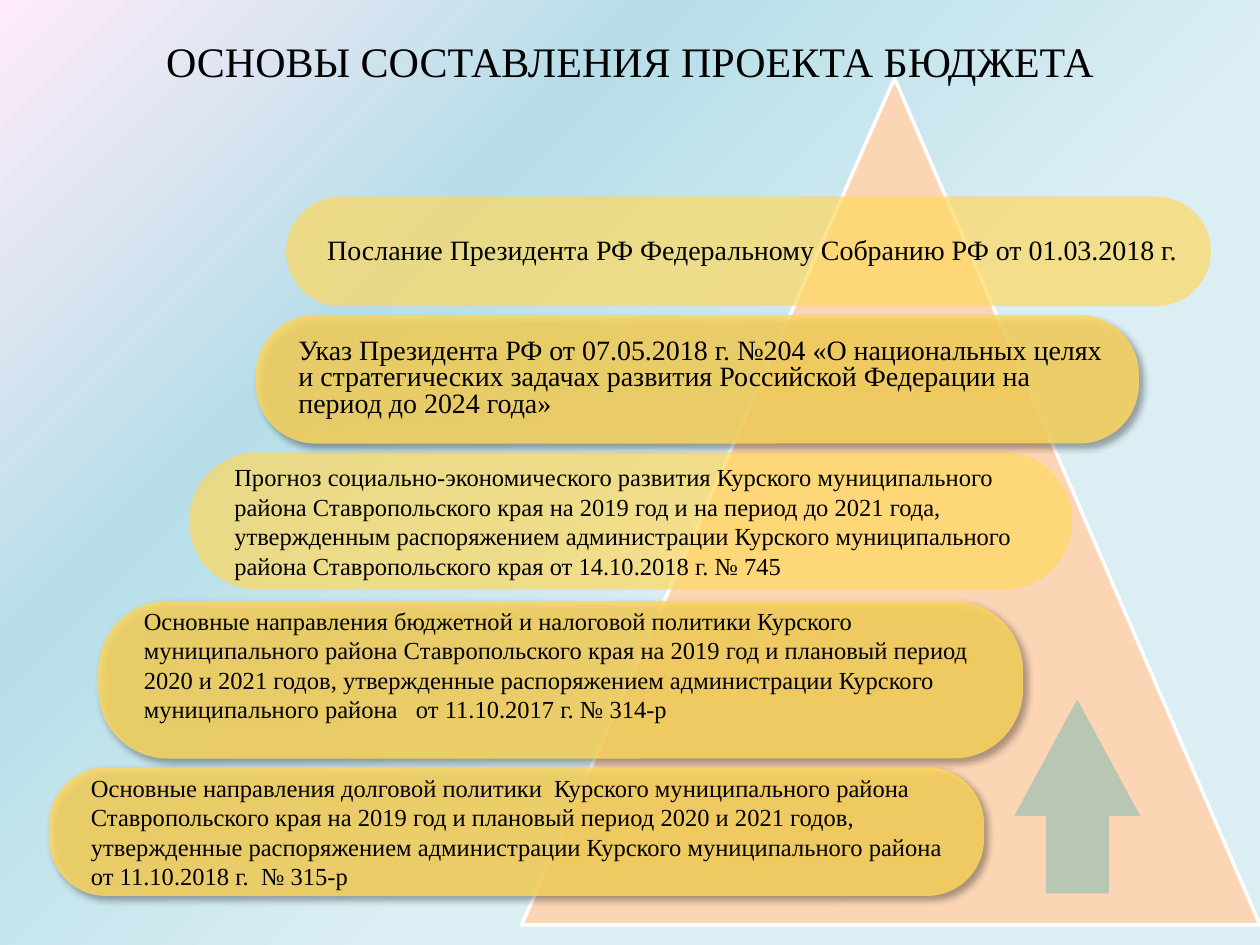
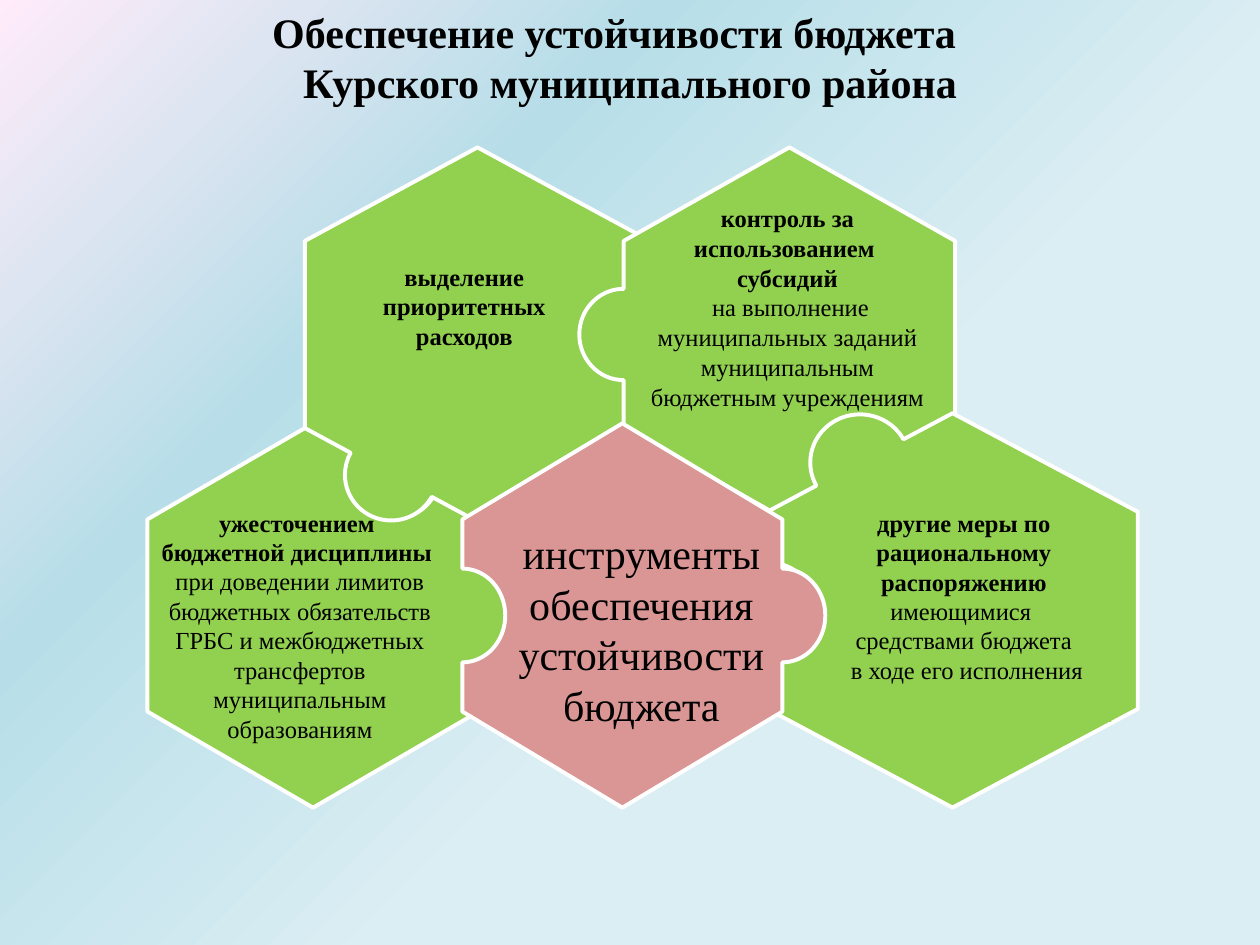
import math
from dataclasses import dataclass

from lxml import etree
from pptx import Presentation, util as u
from pptx.dml.color import RGBColor
from pptx.enum import shapes, text
from pptx.oxml import parse_xml
from pptx.oxml.ns import qn

NS = 'xmlns:a="http://schemas.openxmlformats.org/drawingml/2006/main"'
KIND = shapes.MSO_SHAPE


@dataclass(frozen=True)
class Theme:
    font: str = "Times New Roman"
    ink: str = "000000"
    white: str = "FFFFFF"
    peach: str = "FCD5B5"
    teal: str = "75B7B1"
    gold: str = "FFD85D"
    green: str = "92D050"
    rose: str = "D99694"
    back: tuple = ((0, "DBEEF4"), (40, "DBEEF4"), (70, "B7DEE8"), (100, "FFEBFA"))
    head: int = 24
    large: int = 16
    body: int = 14


T = Theme()


def inch(box):
    return [u.Inches(v) for v in box]


def paint(shape, color, alpha=100, edge=0):
    """Fill a shape, outline it in white if edge is given, drop its shadow."""
    shape.shadow.inherit = False
    shape.fill.solid()
    shape.fill.fore_color.rgb = RGBColor.from_string(color)
    if alpha < 100:
        tint = shape.fill._xPr.find(qn("a:solidFill"))[0]
        etree.SubElement(tint, qn("a:alpha"), val=str(alpha * 1000))
    if edge:
        shape.line.color.rgb = RGBColor.from_string(T.white)
        shape.line.width = u.Pt(edge)
    else:
        shape.line.fill.background()


def shade(shape):
    """Cast a soft shadow to the lower right."""
    effects = shape._element.spPr.find(qn("a:effectLst"))
    effects.append(parse_xml(
        f'<a:outerShdw {NS} blurRad="{u.Pt(4)}" dist="{u.Pt(3)}" dir="2700000" '
        'algn="tl" rotWithShape="0"><a:srgbClr val="000000">'
        '<a:alpha val="40000"/></a:srgbClr></a:outerShdw>'))


def write(shape, paras, size, center=True, lead=None):
    """Each paragraph is a list of (words, bold) runs."""
    frame = shape.text_frame
    frame.word_wrap = True
    for i, runs in enumerate(paras):
        para = frame.paragraphs[0] if i == 0 else frame.add_paragraph()
        para.alignment = text.PP_ALIGN.CENTER if center else text.PP_ALIGN.LEFT
        if lead:
            para.line_spacing = u.Pt(lead)
        for words, bold in runs:
            run = para.add_run()
            run.text = words
            font = run.font
            font.name, font.size, font.bold = T.font, u.Pt(size), bold
            font.color.rgb = RGBColor.from_string(T.ink)
    return frame


def note(slide, box, paras, size=T.body, fill=None, lead=None):
    """Centred text, on a filled rectangle if a fill is given."""
    if fill:
        shape = slide.shapes.add_shape(KIND.RECTANGLE, *inch(box))
        paint(shape, fill)
    else:
        shape = slide.shapes.add_textbox(*inch(box))
    frame = write(shape, paras, size, lead=lead)
    frame.vertical_anchor = text.MSO_ANCHOR.TOP
    return frame


def backdrop(prs):
    """Give the master the gradient that both slides share."""
    fill = prs.slide_master.background.fill
    fill.solid()
    stops = "".join(f'<a:gs pos="{pos * 1000}"><a:srgbClr val="{color}"/></a:gs>'
                    for pos, color in T.back)
    grad = parse_xml(
        f'<a:gradFill {NS} rotWithShape="1"><a:gsLst>{stops}</a:gsLst>'
        '<a:path path="circle"><a:fillToRect l="100000" t="100000"/></a:path>'
        '</a:gradFill>')
    flat = fill._xPr.find(qn("a:solidFill"))
    fill._xPr.replace(flat, grad)


def band(slide, box, words, round_, size=T.body, lead=None, cast=True, foot=0.05):
    shape = slide.shapes.add_shape(KIND.ROUNDED_RECTANGLE, *inch(box))
    shape.adjustments[0] = round_
    paint(shape, T.gold, 82 if cast else 69)
    if cast:
        shade(shape)
    frame = write(shape, [[(words, False)]], size, center=False, lead=lead)
    frame.vertical_anchor = text.MSO_ANCHOR.MIDDLE
    frame.margin_left, frame.margin_top, frame.margin_right, frame.margin_bottom = (
        inch((0.2, 0.05, 0.08, foot)))


def peak(slide, box):
    """Triangle with an upward arrow in its lower right corner."""
    left, top, wide, high = box
    hill = slide.shapes.add_shape(KIND.ISOSCELES_TRIANGLE, *inch(box))
    hill.adjustments[0] = 0.505
    paint(hill, T.peach, edge=2)
    arrow = slide.shapes.add_shape(
        KIND.UP_ARROW, *inch((left + wide - 1.95, top + high - 1.79, 1, 1.54)))
    arrow.adjustments[0], arrow.adjustments[1] = 0.5, 0.926
    paint(arrow, T.teal, 49)


def basis(slide):
    peak(slide, (4.14, 0.62, 5.86, 6.72))
    band(slide, (1.5, 3.59, 7.01, 1.09),
         "Прогноз социально-экономического развития Курского муниципального района "
         "Ставропольского края на 2019 год и на период до 2021 года, утвержденным "
         "распоряжением администрации Курского муниципального района "
         "Ставропольского края от 14.10.2018 г. № 745",
         0.5, lead=17, cast=False)
    band(slide, (2.03, 2.5, 7.01, 1.02),
         "Указ Президента РФ от 07.05.2018 г. №204 «О национальных целях и "
         "стратегических задачах развития Российской Федерации на период до 2024 года»",
         0.464, T.large, lead=15)
    band(slide, (2.27, 1.56, 7.34, 0.87),
         "Послание Президента РФ Федеральному Собранию РФ от 01.03.2018 г.",
         0.5, T.large, lead=17, cast=False)
    note(slide, (1.14, 0.23, 7.72, 0.5),
         [[("ОСНОВЫ СОСТАВЛЕНИЯ ПРОЕКТА БЮДЖЕТА", False)]], T.head)
    band(slide, (0.78, 4.77, 7.34, 1.25),
         "Основные направления бюджетной и налоговой политики Курского "
         "муниципального района Ставропольского края на 2019 год и плановый период "
         "2020 и 2021 годов, утвержденные распоряжением администрации Курского "
         "муниципального района   от 11.10.2017 г. № 314-р",
         0.441, foot=0.29)
    band(slide, (0.39, 6.09, 7.42, 1.02),
         "Основные направления долговой политики  Курского муниципального района "
         "Ставропольского края на 2019 год и плановый период 2020 и 2021 годов,  "
         "утвержденные распоряжением администрации Курского муниципального района  "
         "от 11.10.2018 г.  № 315-р",
         0.441)


def arc(hub, radii, start, way):
    """Half an ellipse as curves (grip, grip, end), cut at its extremes."""
    quart = math.pi / 2
    first = math.floor(way * start / quart + 0.001) + 1
    cuts = [way * (first + i) * quart for i in range(2)]
    stops = [start, *cuts, start + way * math.pi]

    def spot(turn, pull=0):
        return inch((hub[0] + radii[0] * (math.cos(turn) - pull * math.sin(turn)),
                     hub[1] + radii[1] * (math.sin(turn) + pull * math.cos(turn))))

    for a, b in zip(stops, stops[1:]):
        if abs(b - a) > 0.01:
            pull = 4 / 3 * math.tan((b - a) / 4)
            yield spot(a, pull), spot(b, -pull), spot(b)


def piece(slide, box, color, knobs):
    """Hexagonal puzzle piece.

    Sides run clockwise from the upper right one (0). In knobs a side
    has 1 for a tab that sticks out or -1 for a notch.
    """
    left, top, wide, high = box
    mid, right = left + wide / 2, left + wide
    upper, lower = top + high / 4, top + high * 3 / 4
    ends = [(mid, top), (right, upper), (right, lower),
            (mid, top + high), (left, lower), (left, upper)]
    rx, ry = wide * 0.134, high * 0.122
    dots, bends = [], {}
    for side, (x, y) in enumerate(ends):
        dots.append(inch((x, y)))
        if side in knobs:
            nx, ny = ends[(side + 1) % 6]
            hub = ((x + nx) / 2, (y + ny) / 2)
            start = math.atan2((y - ny) / ry, (x - nx) / rx)
            dots.append(inch((hub[0] + rx * math.cos(start),
                              hub[1] + ry * math.sin(start))))
            for curve in arc(hub, (rx, ry), start, knobs[side]):
                bends[len(dots)] = curve
                dots.append(curve[-1])
    pen = slide.shapes.build_freeform(*dots[0])
    pen.add_line_segments(dots[1:], close=True)
    shape = pen.convert_to_shape()
    lines = list(shape._element.iter(qn("a:lnTo")))
    for i, curve in bends.items():
        bend = etree.Element(qn("a:cubicBezTo"))
        for x, y in curve:
            etree.SubElement(bend, qn("a:pt"),
                             x=str(x - shape.left), y=str(y - shape.top))
        line = lines[i - 1]
        line.getparent().replace(line, bend)
    paint(shape, color, edge=2.25)


def puzzle(slide):
    piece(slide, (1.17, 3.36, 2.63, 3.05), T.green, {0: -1, 1: 1})
    piece(slide, (2.42, 1.17, 2.74, 2.97), T.green, {1: -1, 3: 1})
    note(slide, (2.66, 2.03, 2.05, 1.04),
         [[("выделение приоритетных расходов", True)]], fill=T.green)
    piece(slide, (4.95, 1.17, 2.63, 2.97), T.green, {2: -1, 4: 1})
    piece(slide, (6.09, 3.28, 2.94, 3.13), T.green, {4: -1, 5: 1})
    note(slide, (6.48, 3.98, 2.34, 1.75),
         [[("другие меры по рациональному распоряжению ", True),
           ("имеющимися ", False)],
          [("средствами бюджета", False)],
          [(" в ходе его исполнения", False)]], fill=T.green)
    piece(slide, (3.67, 3.36, 2.54, 3.05), T.rose, {1: 1, 4: -1})
    note(slide, (3.93, 4.14, 2.32, 1.72),
         [[("инструменты обеспечения устойчивости бюджета", False)]], T.head)
    note(slide, (1.09, 3.98, 2.58, 2.14),
         [[("ужесточением ", True)],
          [("бюджетной дисциплины ", True)],
          [("при доведении лимитов бюджетных обязательств ГРБС и межбюджетных "
            "трансфертов муниципальным образованиям", False)]])
    note(slide, (5, 1.56, 2.5, 2.09),
         [[("контроль за использованием  субсидий", True)],
          [(" на выполнение муниципальных заданий муниципальным бюджетным "
            "учреждениям", False)]], lead=17)
    title = note(slide, (0, 0, 10, 0.55),
                 [[("Обеспечение устойчивости бюджета", True)],
                  [("Курского муниципального района", True)]], T.head)
    for para, gap in zip(title.paragraphs, (0.25, 0)):
        para._p.get_or_add_pPr().set("marR", str(u.Inches(gap)))


def main():
    prs = Presentation()
    prs.slide_width, prs.slide_height = inch((10, 7.5))
    backdrop(prs)
    for build in (basis, puzzle):
        build(prs.slides.add_slide(prs.slide_layouts[6]))
    prs.save("out.pptx")


if __name__ == "__main__":
    main()
